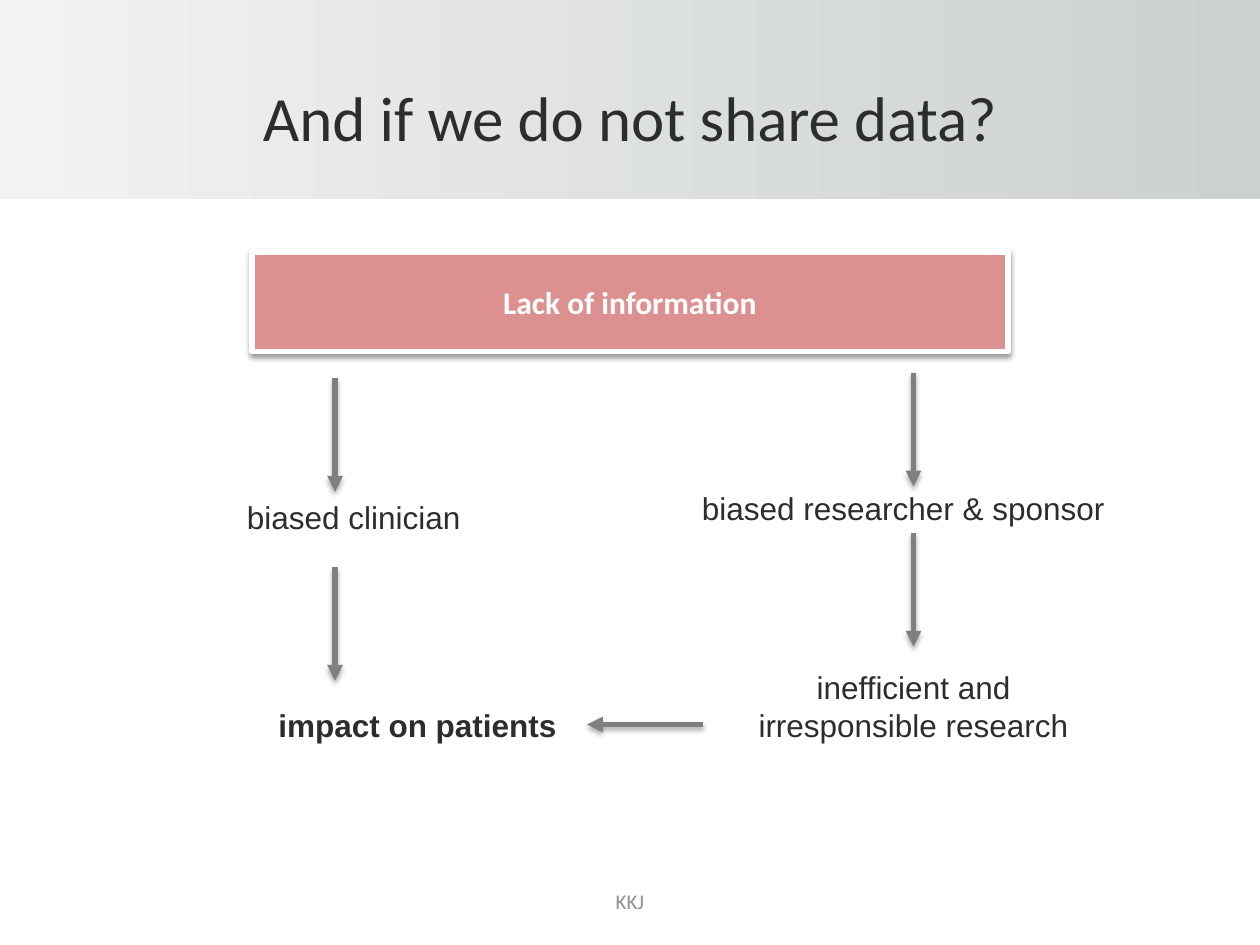
"""Build the slide on what happens when data are not shared."""
from lxml.etree import SubElement
from pptx import Presentation
from pptx.dml.color import RGBColor
from pptx.enum.shapes import MSO_CONNECTOR, MSO_SHAPE
from pptx.enum.text import MSO_ANCHOR, PP_ALIGN
from pptx.oxml import parse_xml
from pptx.oxml.ns import nsdecls, qn
from pptx.util import Pt

rgb = RGBColor.from_string


def add_text(sp, text, size=18, font="Arial", color="2D2D2D", bold=False,
             align=PP_ALIGN.LEFT, anchor=MSO_ANCHOR.TOP, wrap=True):
    tf = sp.text_frame
    tf.word_wrap = wrap
    tf.vertical_anchor = anchor
    p = tf.paragraphs[0]
    p.alignment = align
    r = p.add_run()
    r.text = text
    r.font.size = Pt(size)
    r.font.name = font
    r.font.bold = bold
    r.font.color.rgb = rgb(color)


def add_shadow(sp, dist, alpha):
    spPr = sp._element.spPr
    for old in spPr.findall(qn("a:effectLst")):
        spPr.remove(old)
    spPr.append(parse_xml(
        f'<a:effectLst {nsdecls("a")}><a:outerShdw blurRad="{Pt(3.1)}" dist="{Pt(dist)}" '
        f'dir="5400000" rotWithShape="0"><a:srgbClr val="000000">'
        f'<a:alpha val="{alpha * 1000}"/></a:srgbClr></a:outerShdw></a:effectLst>'))


prs = Presentation()
prs.slide_width, prs.slide_height = Pt(720), Pt(540)
s = prs.slides.add_slide(prs.slide_layouts[6])

band = s.shapes.add_shape(MSO_SHAPE.RECTANGLE, 0, 0, Pt(720), Pt(113.8))
band.shadow.inherit = False
band.line.fill.background()
band.fill.gradient()
band.fill.gradient_angle = 0
for stop, color, pos in zip(band.fill.gradient_stops, ("F2F2F2", "CBD1CC"), (0, 1)):
    stop.color.rgb = rgb(color)
    stop.position = pos

centred = dict(align=PP_ALIGN.CENTER, anchor=MSO_ANCHOR.MIDDLE, font="Calibri")
texts = [
    ("And if we do not share data?", 36, 21.6, 648, 90, dict(centred, size=36)),
    ("KKJ", 246, 500.5, 228, 28.8, dict(centred, size=12, color="8F8F8F")),
    ("biased clinician", 134, 281, 148, 29, {}),
    ("impact on patients", 152, 400, 176, 29, dict(bold=True)),
    ("biased researcher & sponsor", 394, 276, 256, 29, {}),
    ("inefficient and irresponsible research", 407, 378, 230, 51,
     dict(align=PP_ALIGN.CENTER)),
]
for text, x, y, w, h, fmt in texts:
    add_text(s.shapes.add_textbox(Pt(x), Pt(y), Pt(w), Pt(h)), text, **fmt)

box = s.shapes.add_shape(MSO_SHAPE.RECTANGLE, Pt(144), Pt(144), Pt(432), Pt(57))
box.fill.solid()
box.fill.fore_color.rgb = rgb("DC9190")
box.line.color.rgb = rgb("FFFFFF")
box.line.width = Pt(3)
add_shadow(box, 1.6, 38)
add_text(box, "Lack of information", color="FFFFFF", bold=True, wrap=False, **centred)

arrows = [(191.5, y, 191.5, y + 65) for y in (216, 324)]
arrows += [(522, y, 522, y + 65) for y in (213, 304.5)]
arrows.append((402, 414, 335.5, 414))
for ends in arrows:
    arrow = s.shapes.add_connector(MSO_CONNECTOR.STRAIGHT, *map(Pt, ends))
    arrow.line.color.rgb = rgb("7F7F7F")
    arrow.line.width = Pt(3)
    SubElement(arrow.line._get_or_add_ln(), qn("a:tailEnd"), type="triangle")
    add_shadow(arrow, 1.8, 35)

prs.save("out.pptx")
